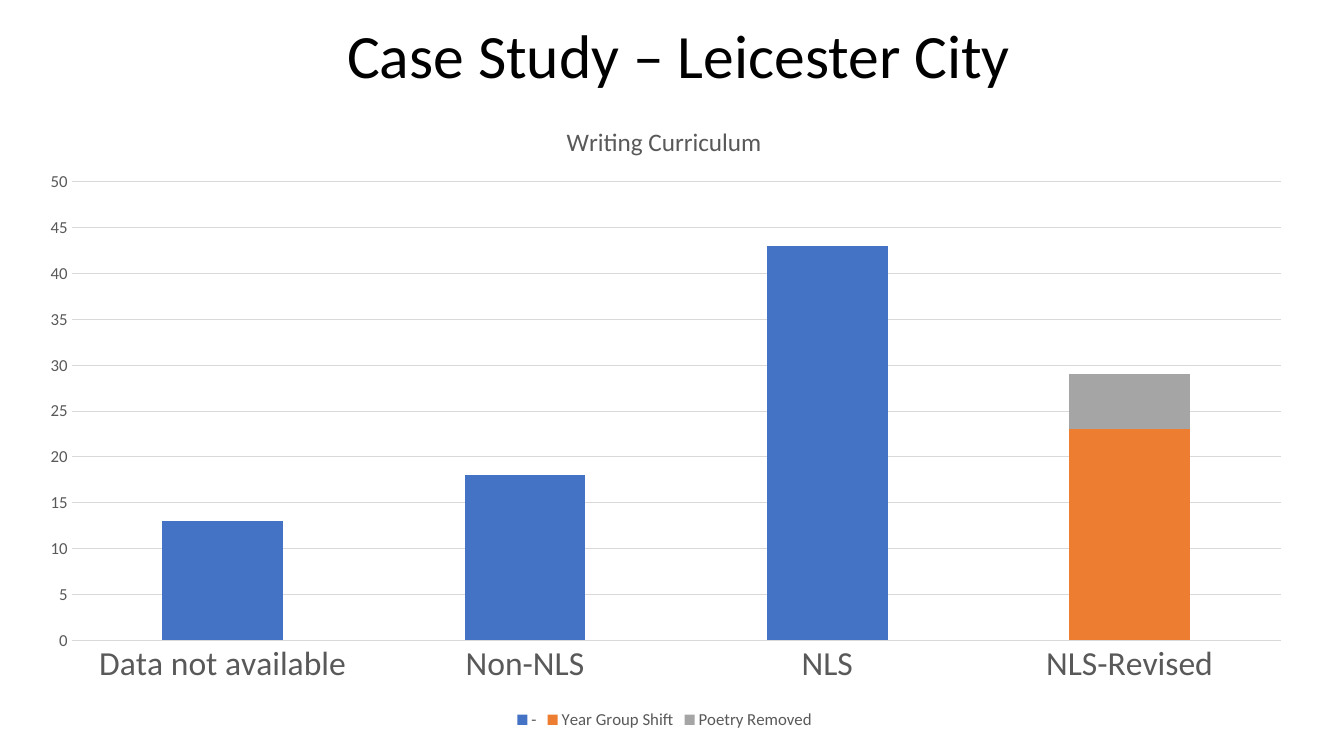
from dataclasses import dataclass

from lxml import etree
from pptx import Presentation
from pptx.chart.data import CategoryChartData
from pptx.dml.color import RGBColor
from pptx.enum import chart as kinds, text
from pptx.oxml.ns import qn
from pptx.util import Cm, Pt

HEADING = "Case Study – Leicester City"
CHART_TITLE = "Writing Curriculum"
CATEGORIES = ["Data not available", "Non-NLS", "NLS", "NLS-Revised"]
SERIES = [
    ("-", [13, 18, 43, None], "4472C4"),
    ("Year Group Shift", [None, None, None, 23], "ED7D31"),
    ("Poetry Removed", [None, None, None, 6], "A5A5A5"),
]

SLIDE_SIZE = (33.87, 19.05)
HEADING_BOX = (2.51, -0.36, 29.21, 3.68)
CHART_BOX = (0.61, 2.36, 32.28, 16.13)
# Fractions of the chart area
TITLE_PLACE = {"x": 0.42, "y": 0.04}
PLOT_PLACE = {"x": 0.037, "y": 0.138, "w": 0.944, "h": 0.716}


@dataclass(frozen=True)
class Theme:
    font: str = "Calibri"
    ink: str = "000000"
    muted: str = "595959"
    rule: str = "D9D9D9"
    heading: float = 44
    category: float = 24
    chart_title: float = 18
    label: float = 12
    rule_width: float = 0.75


THEME = Theme()


def style_font(font, size, color):
    font.name = THEME.font
    font.size = Pt(size)
    font.bold = False
    font.color.rgb = RGBColor.from_string(color)


def style_rule(line):
    line.color.rgb = RGBColor.from_string(THEME.rule)
    line.width = Pt(THEME.rule_width)


def place(parent, index, fractions, inner=False):
    """Fix a chart part's position as fractions of the chart area."""
    for old in parent.findall(qn("c:layout")):
        parent.remove(old)
    layout = etree.Element(qn("c:layout"))
    manual = etree.SubElement(layout, qn("c:manualLayout"))
    if inner:
        etree.SubElement(manual, qn("c:layoutTarget")).set("val", "inner")
    for axis in "xy":
        etree.SubElement(manual, qn(f"c:{axis}Mode")).set("val", "edge")
    for name, fraction in fractions.items():
        etree.SubElement(manual, qn(f"c:{name}")).set("val", str(fraction))
    parent.insert(index, layout)


def add_heading(page):
    box = page.shapes.add_textbox(*map(Cm, HEADING_BOX))
    frame = box.text_frame
    frame.word_wrap = True
    frame.vertical_anchor = text.MSO_ANCHOR.MIDDLE
    para = frame.paragraphs[0]
    para.alignment = text.PP_ALIGN.CENTER
    para.line_spacing = 0.9
    span = para.add_run()
    span.text = HEADING
    style_font(span.font, THEME.heading, THEME.ink)


def add_title(chart):
    chart.has_title = True
    span = chart.chart_title.text_frame.paragraphs[0].add_run()
    span.text = CHART_TITLE
    style_font(span.font, THEME.chart_title, THEME.muted)
    chart.chart_title.include_in_layout = False
    place(chart.element.find(".//" + qn("c:title")), 1, TITLE_PLACE)


def style_axes(chart):
    categories, values = chart.category_axis, chart.value_axis
    for axis, size in ((categories, THEME.category), (values, THEME.label)):
        axis.major_tick_mark = kinds.XL_TICK_MARK.NONE
        axis.minor_tick_mark = kinds.XL_TICK_MARK.NONE
        style_font(axis.tick_labels.font, size, THEME.muted)
    style_rule(categories.format.line)
    values.format.line.fill.background()
    values.has_major_gridlines = True
    style_rule(values.major_gridlines.format.line)
    values.minimum_scale, values.maximum_scale, values.major_unit = 0, 50, 5
    values.tick_labels.number_format = "0"
    values.tick_labels.number_format_is_linked = False


def add_curriculum_chart(page):
    data = CategoryChartData(number_format="0")
    data.categories = CATEGORIES
    for name, values, _ in SERIES:
        data.add_series(name, values)
    chart = page.shapes.add_chart(
        kinds.XL_CHART_TYPE.COLUMN_STACKED, *map(Cm, CHART_BOX), data
    ).chart
    style_font(chart.font, THEME.label, THEME.muted)
    add_title(chart)
    style_axes(chart)

    plot = chart.plots[0]
    plot.gap_width, plot.overlap = 150, 100
    plot.vary_by_categories = False
    for series, (_, _, color) in zip(plot.series, SERIES):
        series.format.fill.solid()
        series.format.fill.fore_color.rgb = RGBColor.from_string(color)
    place(chart.element.find(".//" + qn("c:plotArea")), 0, PLOT_PLACE, inner=True)

    chart.has_legend = True
    chart.legend.position = kinds.XL_LEGEND_POSITION.BOTTOM
    chart.legend.include_in_layout = False
    style_font(chart.legend.font, THEME.label, THEME.muted)


def main():
    deck = Presentation()
    deck.slide_width, deck.slide_height = map(Cm, SLIDE_SIZE)
    page = deck.slides.add_slide(deck.slide_layouts[6])
    add_heading(page)
    add_curriculum_chart(page)
    deck.save("out.pptx")


if __name__ == "__main__":
    main()
